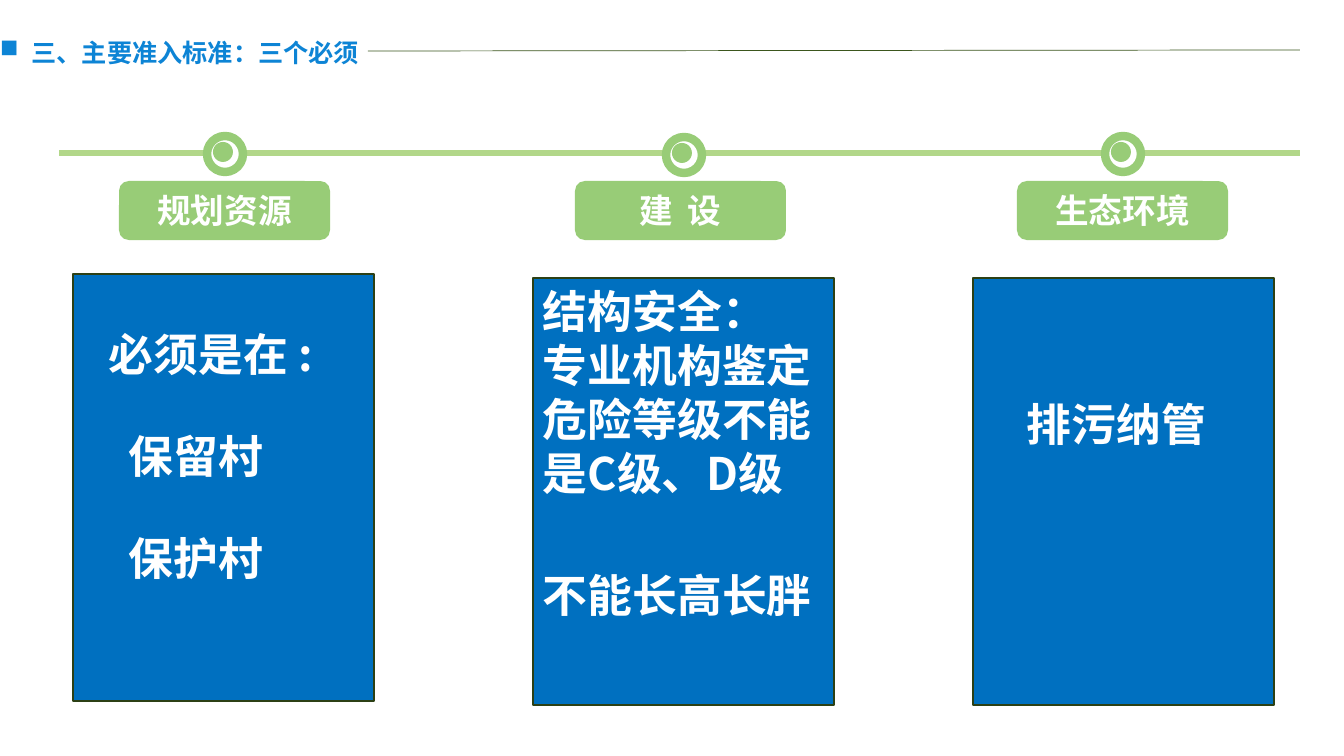
import pptx
import pptx.util
import pptx.dml.color
import pptx.enum.shapes
import pptx.enum.text
import pptx.oxml.ns
import lxml.etree

SCALE = 914400 / 100.8
FONT = "Noto Sans CJK SC"
GREEN, BLUE, WHITE = "98CC77", "0070C0", "FFFFFF"
KIND = pptx.enum.shapes.MSO_SHAPE
ALIGN = pptx.enum.text.PP_ALIGN
PT = pptx.util.Pt
TIGHT = 24.2


def px(*values):
    return [round(v * SCALE) for v in values]


def color(code):
    return pptx.dml.color.RGBColor.from_string(code)


def child(parent, tag, **attrs):
    node = lxml.etree.SubElement(parent, pptx.oxml.ns.qn(tag))
    for key, value in attrs.items():
        node.set(key, value)
    return node


def shape(slide, kind, box, fill, line=None, width=0):
    item = slide.shapes.add_shape(kind, *px(*box))
    item.shadow.inherit = False
    item.fill.solid()
    item.fill.fore_color.rgb = color(fill)
    if line:
        item.line.color.rgb = color(line)
        item.line.width = PT(width)
    else:
        item.line.fill.background()
    return item


def rule(slide, ends, code, width):
    line = slide.shapes.add_connector(
        pptx.enum.shapes.MSO_CONNECTOR.STRAIGHT, *px(*ends))
    line.line.color.rgb = color(code)
    line.line.width = PT(width)
    child(line._element.spPr, "a:effectLst")


def write(para, text, size, code=WHITE):
    run = para.add_run()
    run.text = text
    run.font.size = PT(size)
    run.font.bold = True
    run.font.name = FONT
    run.font.color.rgb = color(code)
    child(run._r.get_or_add_rPr(), "a:ea", typeface=FONT)
    return run


def frame(slide, box, wrap=True):
    text = slide.shapes.add_textbox(*px(*box)).text_frame
    text.word_wrap = wrap
    return text


def title(slide, left, top):
    para = frame(slide, (left, top, 379, 72), False).paragraphs[0]
    para.alignment = ALIGN.CENTER
    props = para._p.get_or_add_pPr()
    props.set("marL", "285750")
    props.set("indent", "-285750")
    child(props, "a:buChar", char="■")
    write(para, "三、主要准入标准：三个必须", 18, "0D84D5")
    rule(slide, (left + 378, top + 19, 1300, top + 18), "3B561D", 0.5)


def node(slide, left, top):
    shape(slide, KIND.OVAL, (left, top, 36, 36), WHITE, GREEN, 6)
    shape(slide, KIND.OVAL, (left + 6, top + 6, 20, 20), GREEN)


def label(slide, left, top, text, gap):
    item = shape(slide, KIND.ROUNDED_RECTANGLE, (left, top, 211, 59), GREEN)
    item.text_frame.vertical_anchor = pptx.enum.text.MSO_ANCHOR.MIDDLE
    para = item.text_frame.paragraphs[0]
    para.alignment = ALIGN.CENTER
    run = write(para, text, 24)
    if gap:
        run._r.get_or_add_rPr().set("spc", str(gap))


def panel(slide, left, top, inner, lines):
    """Place a blue card; inner is its text box relative to the card."""
    shape(slide, KIND.RECTANGLE, (left, top, 301, 427), BLUE, "2C4015", 1)
    dx, dy, wide, high = inner
    text = frame(slide, (left + dx, top + dy, wide, high))
    for i, (words, pitch, before, indent) in enumerate(lines):
        para = text.add_paragraph() if i else text.paragraphs[0]
        para.line_spacing = PT(pitch)
        if before:
            para.space_before = PT(before)
        if indent:
            para._p.get_or_add_pPr().set("marL", str(px(indent)[0]))
        write(para, words, 32)


COLUMNS = [
    ((207, 136), (119, "规划资源", 0), (73, 274, (26, 68, 288, 283), [
        ("必须是在 :", TIGHT, 0, 0),
        ("保留村", TIGHT, 2 * TIGHT, 20),
        ("保护村", TIGHT, 2 * TIGHT, 20)])),
    ((666, 137), (575, "建 设", 270), (533, 278, (0, 0, 301, 453), [
        ("结构安全：", 38.6, 0, 0),
        ("专业机构鉴定危险等级不能是C级、D级", 38.6, 0, 0),
        ("不能长高长胖", TIGHT, 63, 0)])),
    ((1105, 136), (1017, "生态环境", 0), (973, 278, (44, 134, 242, 44), [
        ("排污纳管", TIGHT, 0, 0)])),
]


def main():
    deck = pptx.Presentation()
    deck.slide_width, deck.slide_height = px(1344, 756)
    slide = deck.slides.add_slide(deck.slide_layouts[6])
    title(slide, -10, 32)
    rule(slide, (1300, 153, 59, 153), "B2D789", 4.5)
    for spot, (left, text, gap), card in COLUMNS:
        node(slide, *spot)
        label(slide, left, 181, text, gap)
        panel(slide, *card)
    deck.save("out.pptx")


if __name__ == "__main__":
    main()
